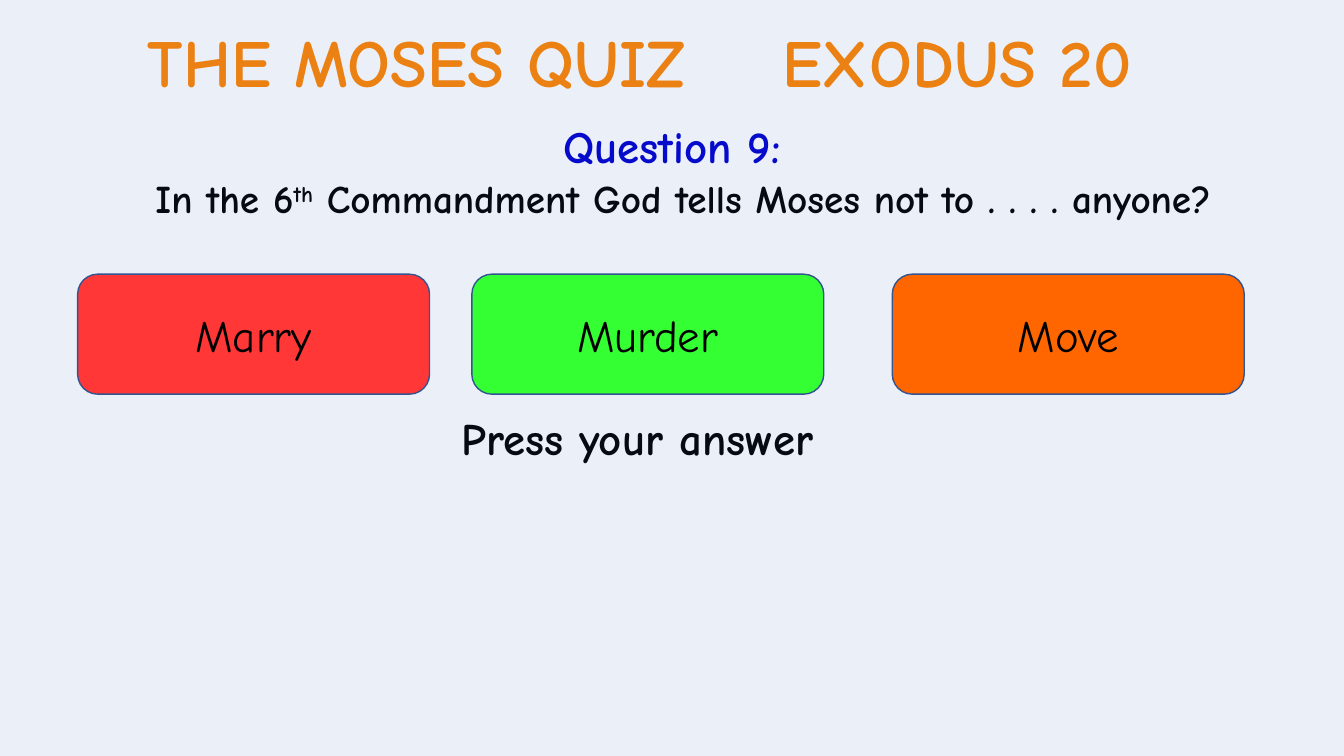
import pptx
import pptx.util
import pptx.dml.color
import pptx.enum.shapes
import pptx.enum.text
import pptx.oxml.ns
import lxml.etree

Inches = pptx.util.Inches
Pt = pptx.util.Pt
RGBColor = pptx.dml.color.RGBColor
Align = pptx.enum.text.PP_ALIGN
Preset = pptx.enum.shapes.MSO_SHAPE

ORANGE = RGBColor(0xFF, 0x82, 0x00)
BLUE = RGBColor(0x00, 0x00, 0xCC)
BLACK = RGBColor(0x00, 0x00, 0x00)
TINT = RGBColor(0x44, 0x72, 0xC4)
OUTLINE = RGBColor(0x32, 0x54, 0x91)
ANSWERS = [
    ("Marry", 0.77, RGBColor(0xFF, 0x37, 0x37)),
    ("Murder", 4.68, RGBColor(0x33, 0xFF, 0x33)),
    ("Move", 8.85, RGBColor(0xFF, 0x66, 0x00)),
]


class QuizSlide:
    font = "Comic Neue"

    def __init__(self, slide):
        self.slide = slide

    def run(self, paragraph, words, size, color=BLACK, bold=True, **attributes):
        run = paragraph.add_run()
        run.text = words
        run.font.name = self.font
        run.font.size = Pt(size)
        run.font.bold = bold
        run.font.color.rgb = color
        for name, value in attributes.items():
            run.font._element.set(name, str(value))

    def text(self, box, align=Align.CENTER, wrap=True, grow=False):
        frame = self.slide.shapes.add_textbox(*map(Inches, box)).text_frame
        frame.word_wrap = wrap
        if grow:
            frame.auto_size = pptx.enum.text.MSO_AUTO_SIZE.SHAPE_TO_FIT_TEXT
        paragraph = frame.paragraphs[0]
        paragraph.alignment = align
        return paragraph

    def panel(self, preset, box, color, alpha=None):
        panel = self.slide.shapes.add_shape(preset, *map(Inches, box))
        panel.shadow.inherit = False
        panel.fill.solid()
        panel.fill.fore_color.rgb = color
        panel.line.color.rgb = OUTLINE
        panel.line.width = Pt(1)
        if alpha is not None:
            qn = pptx.oxml.ns.qn
            fill = panel._element.spPr.find(qn("a:solidFill"))
            opacity = lxml.etree.SubElement(fill[0], qn("a:alpha"))
            opacity.set("val", str(alpha * 1000))
        return panel

    def answer(self, words, left, color):
        button = self.panel(Preset.ROUNDED_RECTANGLE, (left, 2.72, 3.49, 1.19), color)
        frame = button.text_frame
        frame.vertical_anchor = pptx.enum.text.MSO_ANCHOR.MIDDLE
        paragraph = frame.paragraphs[0]
        paragraph.alignment = Align.CENTER
        self.run(paragraph, words, 32, bold=False)


def main():
    deck = pptx.Presentation()
    deck.slide_width = Inches(13.33)
    deck.slide_height = Inches(7.5)
    quiz = QuizSlide(deck.slides.add_slide(deck.slide_layouts[6]))

    title = quiz.text((0.43, 0.15, 12.07, 0.91), wrap=False, grow=True)
    quiz.run(title, "THE MOSES QUIZ", 48, ORANGE)
    quiz.run(title, " ", 48, ORANGE, spc=5200)
    quiz.run(title, "EXODUS 20 ", 48, ORANGE)

    question = quiz.text((0.99, 1.65, 11.57, 1.19))
    question.line_spacing = Pt(36)
    question.space_before = Pt(10)
    quiz.run(question, "In the 6", 28)
    quiz.run(question, "th", 28, baseline=30000)
    quiz.run(question, " Commandment God tells Moses not to . . . . anyone?", 28)

    prompt = quiz.text((4.48, 4.09, 6.73, 0.72), Align.LEFT)
    prompt.line_spacing = 0.9
    prompt.space_before = Pt(7.5)
    quiz.run(prompt, "Press your answer", 32)

    heading = quiz.text((4.46, 1.13, 4.41, 0.64), grow=True)
    quiz.run(heading, "Question 9:", 32, BLUE)

    quiz.panel(Preset.RECTANGLE, (-0.43, -0.94, 14.19, 8.73), TINT, alpha=10)
    for words, left, color in ANSWERS:
        quiz.answer(words, left, color)

    deck.save("out.pptx")


if __name__ == "__main__":
    main()
